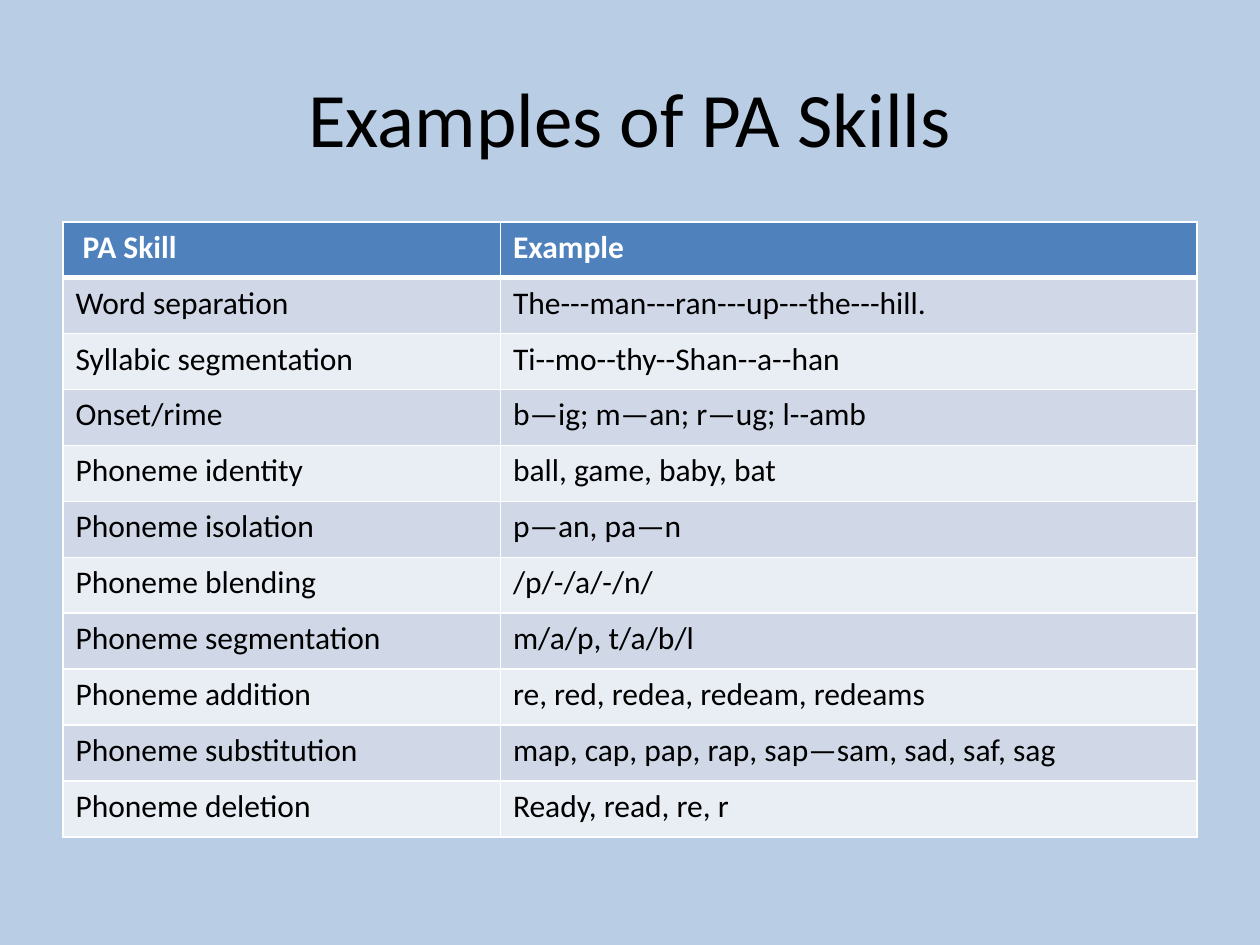
from lxml.etree import SubElement
from pptx import Presentation
from pptx.dml.color import RGBColor
from pptx.enum.text import MSO_ANCHOR, PP_ALIGN
from pptx.oxml.ns import qn
from pptx.util import Pt

TITLE = "Examples of PA Skills"
ROWS = [
    (" PA Skill", "Example"),
    ("Word separation", "The---man---ran---up---the---hill."),
    ("Syllabic segmentation", "Ti--mo--thy--Shan--a--han"),
    ("Onset/rime", "b—ig; m—an; r—ug; l--amb"),
    ("Phoneme identity", "ball, game, baby, bat"),
    ("Phoneme isolation", "p—an, pa—n"),
    ("Phoneme blending", "/p/-/a/-/n/"),
    ("Phoneme segmentation", "m/a/p, t/a/b/l"),
    ("Phoneme addition", "re, red, redea, redeam, redeams"),
    ("Phoneme substitution", "map, cap, pap, rap, sap—sam, sad, saf, sag"),
    ("Phoneme deletion", "Ready, read, re, r"),
]

FONT = "Calibri"
BACKGROUND = RGBColor(0xB9, 0xCD, 0xE5)
HEADER_FILL = RGBColor(0x4F, 0x81, 0xBD)
BAND_FILLS = (RGBColor(0xE9, 0xED, 0xF4), RGBColor(0xD0, 0xD8, 0xE8))
WHITE = RGBColor(0xFF, 0xFF, 0xFF)
BLACK = RGBColor(0, 0, 0)

LEFT, WIDTH = 36, 648
TABLE_TOP, ROW_HEIGHT = 126.8, 31.95
SKILL_WIDTH = 250
THIN, THICK = 1, 3


def format_paragraph(paragraph, size, color, bold=False):
    for run in paragraph.runs:
        run.font.name = FONT
        run.font.size = Pt(size)
        run.font.bold = bold
        run.font.color.rgb = color


def add_borders(cell, top, bottom):
    """Draw white cell borders; call before filling, as lines precede the fill in the XML."""
    properties = cell._tc.get_or_add_tcPr()
    for side, width in (("L", THIN), ("R", THIN), ("T", top), ("B", bottom)):
        line = SubElement(properties, qn(f"a:ln{side}"), w=str(Pt(width)))
        fill = SubElement(line, qn("a:solidFill"))
        SubElement(fill, qn("a:srgbClr"), val=str(WHITE))


def add_title(slide):
    title = slide.shapes.add_textbox(Pt(LEFT), Pt(21.6), Pt(WIDTH), Pt(90))
    text_frame = title.text_frame
    text_frame.word_wrap = True
    text_frame.vertical_anchor = MSO_ANCHOR.MIDDLE
    text_frame.text = TITLE
    paragraph = text_frame.paragraphs[0]
    paragraph.alignment = PP_ALIGN.CENTER
    format_paragraph(paragraph, 44, BLACK)


def add_skill_table(slide):
    table = slide.shapes.add_table(
        len(ROWS), len(ROWS[0]), Pt(LEFT), Pt(TABLE_TOP),
        Pt(WIDTH), Pt(ROW_HEIGHT * len(ROWS)),
    ).table
    table.columns[0].width = Pt(SKILL_WIDTH)
    table.columns[1].width = Pt(WIDTH - SKILL_WIDTH)
    for row_index, texts in enumerate(ROWS):
        table.rows[row_index].height = Pt(ROW_HEIGHT)
        is_header = row_index == 0
        for column_index, text in enumerate(texts):
            cell = table.cell(row_index, column_index)
            add_borders(
                cell,
                top=THICK if row_index == 1 else THIN,
                bottom=THICK if is_header else THIN,
            )
            cell.fill.solid()
            cell.fill.fore_color.rgb = HEADER_FILL if is_header else BAND_FILLS[row_index % 2]
            cell.text_frame.text = text
            format_paragraph(
                cell.text_frame.paragraphs[0], 18, WHITE if is_header else BLACK, is_header
            )


def main():
    presentation = Presentation()
    presentation.slide_width, presentation.slide_height = Pt(720), Pt(540)
    slide = presentation.slides.add_slide(presentation.slide_layouts[6])
    slide.background.fill.solid()
    slide.background.fill.fore_color.rgb = BACKGROUND
    add_title(slide)
    add_skill_table(slide)
    presentation.save("out.pptx")


if __name__ == "__main__":
    main()
